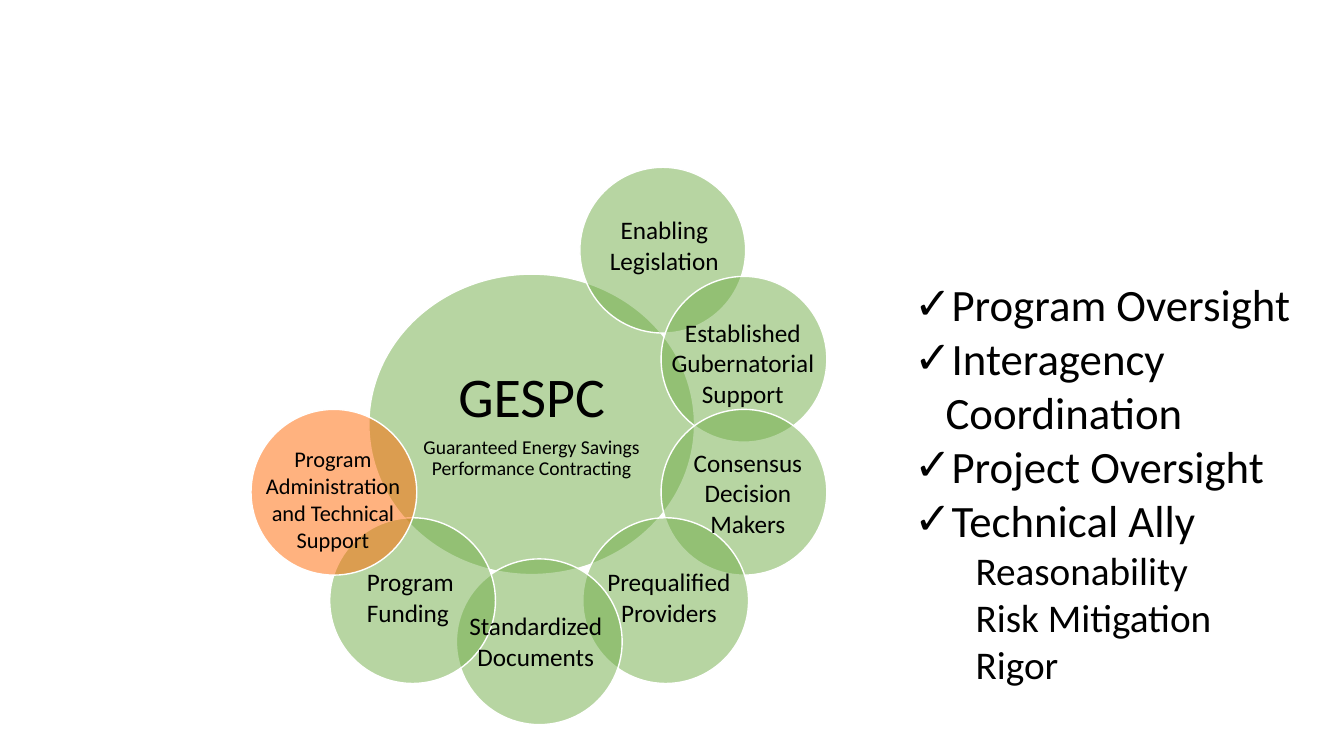
from lxml.etree import SubElement
from pptx import Presentation
from pptx.dml.color import RGBColor
from pptx.enum.shapes import MSO_SHAPE as SHAPE
from pptx.enum.text import MSO_ANCHOR as ANCHOR, PP_ALIGN as ALIGN
from pptx.oxml.ns import qn
from pptx.util import Pt

COLORS = {"text": "000000", "line": "FFFFFF", "green": "70AD47", "orange": "FF6600"}
FONT = "Calibri"
DIAMETER = 118.4

HUB = (263.5, 195.8, 232.6, 214.6)
HUB_TEXT = [("GESPC", 40), ("Guaranteed Energy Savings Performance Contracting", 14)]

PETALS = [
    ((414.2, 119.5), "green"),
    ((472.2, 197.4), "green"),
    ((472.2, 292.4), "green"),
    ((416.3, 369.8), "green"),
    ((326, 399.2), "green"),
    ((235.5, 369.8), "green"),
    ((179.3, 292.4), "orange"),
]
LABELS = [
    ("Established Gubernatorial Support", (468, 223.2, 125.3, 72.7), 18, ALIGN.CENTER),
    ("Consensus Decision Makers", (485.3, 316.1, 97.9, 72.7), 18, ALIGN.CENTER),
    ("Prequalified Providers", (419.8, 401.3, 115.9, 50.9), 18, ALIGN.CENTER),
    ("Standardized Documents", (326.2, 432.7, 113, 50.9), 18, ALIGN.CENTER),
    ("Program Funding", (254.9, 401.3, 78.5, 50.9), 18, ALIGN.LEFT),
    ("Program Administration and Technical Support", (181.4, 314.6, 113, 85), 16, ALIGN.CENTER),
    ("Enabling Legislation", (424.1, 149.8, 100.8, 50.9), 18, ALIGN.CENTER),
]

ROLES_BOX = (645.8, 194.4, 293.8, 303.1)
ROLES = ["Program Oversight", "Interagency Coordination", "Project Oversight", "Technical Ally"]
ALLY_TRAITS = ["Reasonability", "Risk Mitigation", "Rigor"]


def rgb(name):
    return RGBColor.from_string(COLORS[name])


def add_run(p, text, size):
    r = p.add_run()
    r.text = text
    r.font.name = FONT
    r.font.size = Pt(size)
    r.font.color.rgb = rgb("text")


def indent(p, left, first=0, bullet=None):
    pPr = p._p.get_or_add_pPr()
    pPr.set("marL", str(Pt(left)))
    pPr.set("indent", str(Pt(first)))
    if bullet:
        SubElement(pPr, qn("a:buFont")).set("typeface", FONT)
        SubElement(pPr, qn("a:buChar")).set("char", bullet)


def add_circle(s, box, color):
    sp = s.shapes.add_shape(SHAPE.OVAL, *map(Pt, box))
    sp.shadow.inherit = False
    sp.fill.solid()
    sp.fill.fore_color.rgb = rgb(color)
    clr = sp._element.spPr.find(qn("a:solidFill"))[0]
    SubElement(clr, qn("a:alpha")).set("val", "50000")
    sp.line.color.rgb = rgb("line")
    sp.line.width = Pt(1)
    return sp


def add_text_frame(s, box):
    tf = s.shapes.add_textbox(*map(Pt, box)).text_frame
    tf.word_wrap = True
    return tf


def next_paragraph(tf, i):
    return tf.add_paragraph() if i else tf.paragraphs[0]


def add_roles(s):
    tf = add_text_frame(s, ROLES_BOX)
    items = [(t, 32, (22.5, -22.5, "✓")) for t in ROLES]
    items += [(t, 28, (44,)) for t in ALLY_TRAITS]
    for i, (text, size, margins) in enumerate(items):
        p = next_paragraph(tf, i)
        indent(p, *margins)
        add_run(p, text, size)


def add_hub(s):
    tf = add_circle(s, HUB, "green").text_frame
    tf.word_wrap = True
    tf.vertical_anchor = ANCHOR.MIDDLE
    tf.margin_left = tf.margin_right = Pt(2)
    tf.margin_top = tf.margin_bottom = Pt(4)
    for i, (text, size) in enumerate(HUB_TEXT):
        p = next_paragraph(tf, i)
        p.alignment = ALIGN.CENTER
        p.line_spacing = 0.9
        p.space_after = Pt(6)
        add_run(p, text, size)


def main():
    prs = Presentation()
    prs.slide_width, prs.slide_height = Pt(960), Pt(540)
    s = prs.slides.add_slide(prs.slide_layouts[6])
    add_roles(s)
    add_hub(s)
    for corner, color in PETALS:
        add_circle(s, (*corner, DIAMETER, DIAMETER), color)
    for text, box, size, align in LABELS:
        p = add_text_frame(s, box).paragraphs[0]
        p.alignment = align
        add_run(p, text, size)
    prs.save("out.pptx")


if __name__ == "__main__":
    main()
